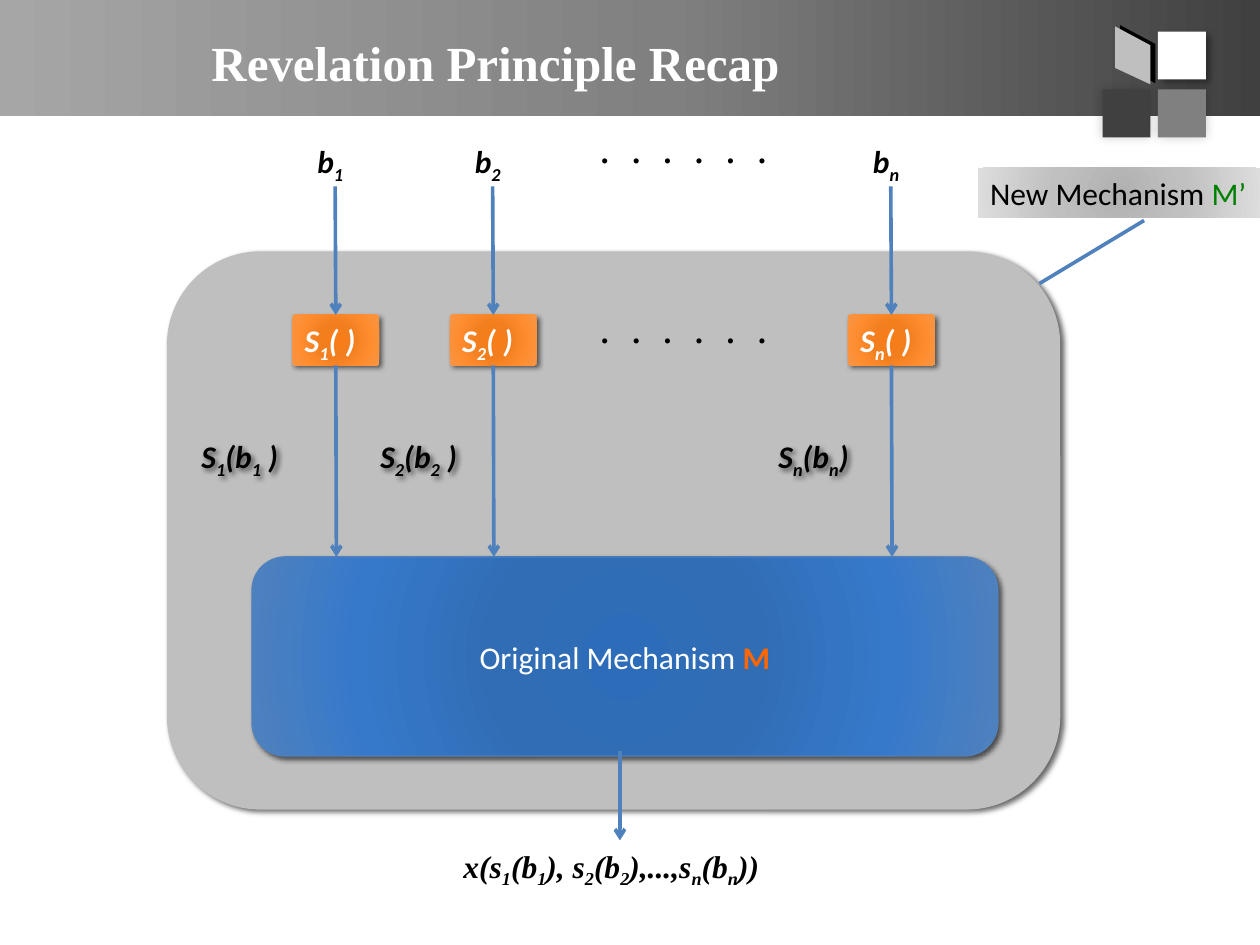
from pptx import Presentation
from pptx.dml.color import RGBColor
from pptx.enum import shapes, text
from pptx.oxml import parse_xml
from pptx.oxml.ns import nsdecls, qn
from pptx.util import Inches, Pt

WHITE, BLACK = RGBColor(255, 255, 255), RGBColor(0, 0, 0)
DARK, MID, SILVER = (RGBColor.from_string(c) for c in ("404040", "808080", "BFBFBF"))
BLUE = RGBColor(0x4F, 0x81, 0xBD)
ORANGE, GREEN = RGBColor(0xFF, 0x66, 0x00), RGBColor(0x00, 0x80, 0x00)

# Gradient stops: position in percent, colour
HEADER_STOPS = [(0, RGBColor(0xA6, 0xA6, 0xA6)), (53, MID), (100, DARK)]
BLUE_STOPS = [(0, RGBColor(0x2C, 0x6C, 0xB9)), (34, RGBColor(0x31, 0x6D, 0xB5)),
              (70, RGBColor(0x36, 0x79, 0xCA)), (100, BLUE)]
ORANGE_STOPS = [(0, RGBColor(0xF9, 0x7D, 0x16)), (34, RGBColor(0xF2, 0x7E, 0x1E)),
                (70, RGBColor(0xFF, 0x8D, 0x30)), (100, RGBColor(0xF7, 0x96, 0x46))]
GREY_STOPS = [(0, RGBColor(0xB1, 0xB1, 0xB1)), (45, RGBColor(0xC0, 0xC0, 0xC0)),
              (100, RGBColor(0xDD, 0xDD, 0xDD))]

# Shadow: opacity %, blur pt, distance pt, direction in degrees
DROP = (60, 3, 2, 45)

BODY = {"size": Pt(18), "name": "Calibri"}
MATH = {**BODY, "bold": True, "italic": True}
SERIF = {"size": Pt(18), "name": "Times New Roman", "bold": True}
DOTS = ".   .   .   .   .   ."


def set_gradient(shape, stops, radial=True):
    shape.fill.background()
    gs = "".join(f'<a:gs pos="{pos * 1000}"><a:srgbClr val="{c}"/></a:gs>' for pos, c in stops)
    way = ('<a:path path="circle"><a:fillToRect l="100000" t="100000" r="100000" b="100000"/></a:path>'
           if radial else '<a:lin ang="0" scaled="0"/>')
    grad = parse_xml(f'<a:gradFill {nsdecls("a")} rotWithShape="1"><a:gsLst>{gs}</a:gsLst>{way}</a:gradFill>')
    props = shape._element.spPr
    props.replace(props.find(qn("a:noFill")), grad)


def set_shadow(shape, shadow):
    shape.shadow.inherit = False
    if shadow:
        opacity, blur, dist, angle = shadow
        shape._element.spPr.find(qn("a:effectLst")).append(parse_xml(
            f'<a:outerShdw {nsdecls("a")} blurRad="{Pt(blur)}" dist="{Pt(dist)}" dir="{angle * 60000}" '
            f'algn="ctr" rotWithShape="0"><a:srgbClr val="000000"><a:alpha val="{opacity * 1000}"/>'
            '</a:srgbClr></a:outerShdw>'))


def add_block(slide, box, fill, kind=shapes.MSO_SHAPE.RECTANGLE, line=None, shadow=None, radial=True):
    block = slide.shapes.add_shape(kind, *map(Inches, box))
    if isinstance(fill, list):
        set_gradient(block, fill, radial)
    else:
        block.fill.solid()
        block.fill.fore_color.rgb = fill
    if line:
        block.line.color.rgb = line
        block.line.width = Pt(0.75)
    else:
        block.line.fill.background()
    set_shadow(block, shadow)
    return block


def write(shape, pieces, look, fit=True):
    """Write (text, colour, extra format) pieces; every second part between underscores is a subscript."""
    frame = shape.text_frame
    frame.word_wrap = not fit
    frame.vertical_anchor = text.MSO_ANCHOR.TOP if fit else text.MSO_ANCHOR.MIDDLE
    if fit:
        frame.auto_size = text.MSO_AUTO_SIZE.SHAPE_TO_FIT_TEXT
    line = frame.paragraphs[0]
    line.alignment = text.PP_ALIGN.LEFT
    for words, colour, extra in pieces:
        for i, part in enumerate(words.split("_")):
            run = line.add_run()
            run.text = part
            run.font.color.rgb = colour
            for key, value in {**look, **extra}.items():
                setattr(run.font, key, value)
            if i % 2:
                run._r.get_or_add_rPr().set("baseline", "-25000")
    return line


def add_label(slide, box, words, look, colour=BLACK, fit=True, shadow=None):
    label = slide.shapes.add_textbox(*map(Inches, box))
    write(label, [(words, colour, {})], look, fit)
    if shadow:
        set_shadow(label, shadow)
    return label


def add_line(slide, start, end, arrow=True):
    line = slide.shapes.add_connector(shapes.MSO_CONNECTOR.STRAIGHT, *map(Inches, (*start, *end)))
    line.line.color.rgb = BLUE
    line.line.width = Pt(2.08)
    if arrow:
        line.line._get_or_add_ln().append(parse_xml(f'<a:tailEnd {nsdecls("a")} type="arrow"/>'))
    line._element.spPr.append(parse_xml(f'<a:effectLst {nsdecls("a")}/>'))
    return line


def add_header(slide, box):
    left, top, width, height = box
    add_block(slide, box, HEADER_STOPS, radial=False)
    add_ornament(slide, left + width - 1.25, top + 0.25)
    add_label(slide, (left + 1.58, top + 0.08, width - 1.58, 0.83), "Revelation Principle Recap",
              {**SERIF, "size": Pt(28)}, WHITE, fit=False)


def add_ornament(slide, left, top):
    side, step_x, step_y = 0.38, 0.44, 0.46
    # Tilted tile, with its dark edge behind
    for shift, colour in ((0.04, BLACK), (0, SILVER)):
        x, y = left + 0.1 + shift, top - 0.04 - shift / 4
        corners = [(x, y), (x + 0.28, y + 0.15), (x + 0.28, y + 0.46), (x, y + 0.33)]
        points = [(Inches(a), Inches(b)) for a, b in corners]
        outline = slide.shapes.build_freeform(*points[0])
        outline.add_line_segments(points[1:])
        tile = outline.convert_to_shape()
        tile.fill.solid()
        tile.fill.fore_color.rgb = colour
        tile.line.fill.background()
        set_shadow(tile, None)
    # Flat tiles: column, row, colour, shadow
    for col, row, colour, shadow in ((0, 1, DARK, (20, 6, 0, 225)), (1, 1, MID, (20, 6, 0, 315)),
                                     (1, 0, WHITE, (40, 4, 3, 45))):
        add_block(slide, (left + col * step_x, top + row * step_y, side, side), colour, shadow=shadow)


def add_agent(slide, center, top, index, bid_left, bid):
    """One column: bid, strategy box, played bid, arrow into the mechanism."""
    value = add_label(slide, (center - 0.24, top, 0.48, 0.4), f"b_{index}_", MATH)
    strategy = add_block(slide, (center - 0.34, top + 1.42, 0.69, 0.4), ORANGE_STOPS, shadow=DROP)
    write(strategy, [(f"S_{index}_( )", WHITE, {})], MATH)
    arrow = add_line(slide, (center, top + 0.4), (center, top + 1.42))
    arrow.begin_connect(value, 2)
    arrow.end_connect(strategy, 0)
    played = add_line(slide, (center, top + 1.82), (center + 0.01, top + 3.34))
    played.begin_connect(strategy, 2)
    add_label(slide, (bid_left, top + 2.34, 0.91, 0.4), bid, MATH, shadow=DROP)


def add_mechanism(slide, box):
    left, top, width, height = box
    rounded = shapes.MSO_SHAPE.ROUNDED_RECTANGLE
    add_block(slide, box, SILVER, rounded, SILVER, DROP)
    inner = add_block(slide, (left + 0.67, top + 2.42, 5.92, 1.58), BLUE_STOPS, rounded, BLUE, DROP)
    line = write(inner, [("Original Mechanism ", WHITE, {}), ("M", ORANGE, {"bold": True})], BODY, fit=False)
    line.alignment = text.PP_ALIGN.CENTER

    for center, index, bid_left, bid in ((2.66, "1", 1.5, "S_1_(b_1_ )"),
                                         (3.91, "2", 2.92, "S_2_(b_2_ )"),
                                         (7.07, "n", 6.08, "S_n_(b_n_)")):
        add_agent(slide, center, top - 0.92, index, bid_left, bid)
    for dots_top in (top - 1, top + 0.43):
        add_label(slide, (left + 3.34, dots_top, 1.53, 0.4), DOTS, SERIF)

    # Outcome
    add_line(slide, (4.92, top + 3.96), (4.92, top + 4.67))
    add_label(slide, (3.58, top + 4.67, 2.74, 0.4), "x(s_1_(b_1_), s_2_(b_2_),...,s_n_(b_n_))",
              {**SERIF, "italic": True})


def add_callout(slide, box):
    left, top, width, height = box
    add_line(slide, (9.08, 1.75), (8.25, 2.25), arrow=False)
    callout = add_block(slide, box, GREY_STOPS)
    write(callout, [("New Mechanism ", BLACK, {}), ("M’", GREEN, {})], BODY)


def main():
    deck = Presentation()
    deck.slide_width, deck.slide_height = Inches(10), Inches(7.5)
    slide = deck.slides.add_slide(deck.slide_layouts[6])
    add_header(slide, (0, 0, 10, 0.92))
    add_mechanism(slide, (1.33, 2, 7.08, 4.42))
    add_callout(slide, (7.76, 1.33, 2.25, 0.4))
    deck.save("out.pptx")


if __name__ == "__main__":
    main()
